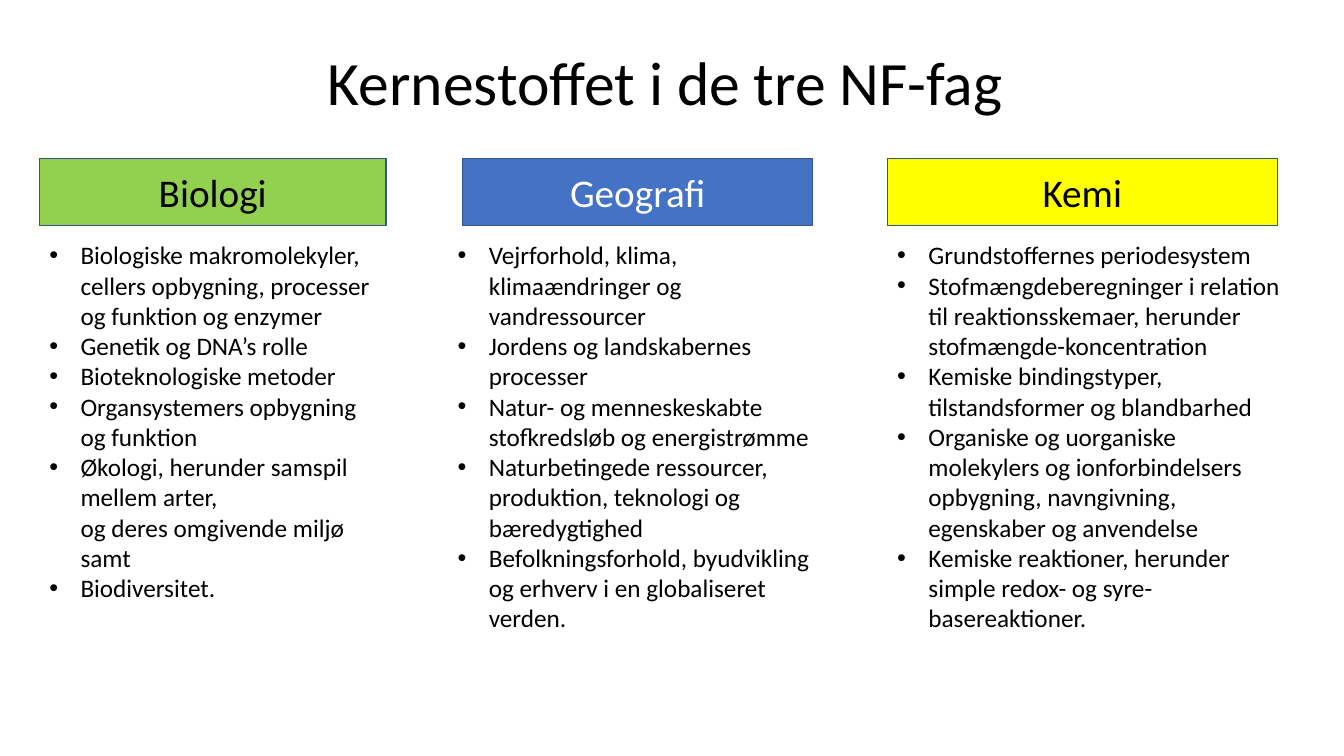
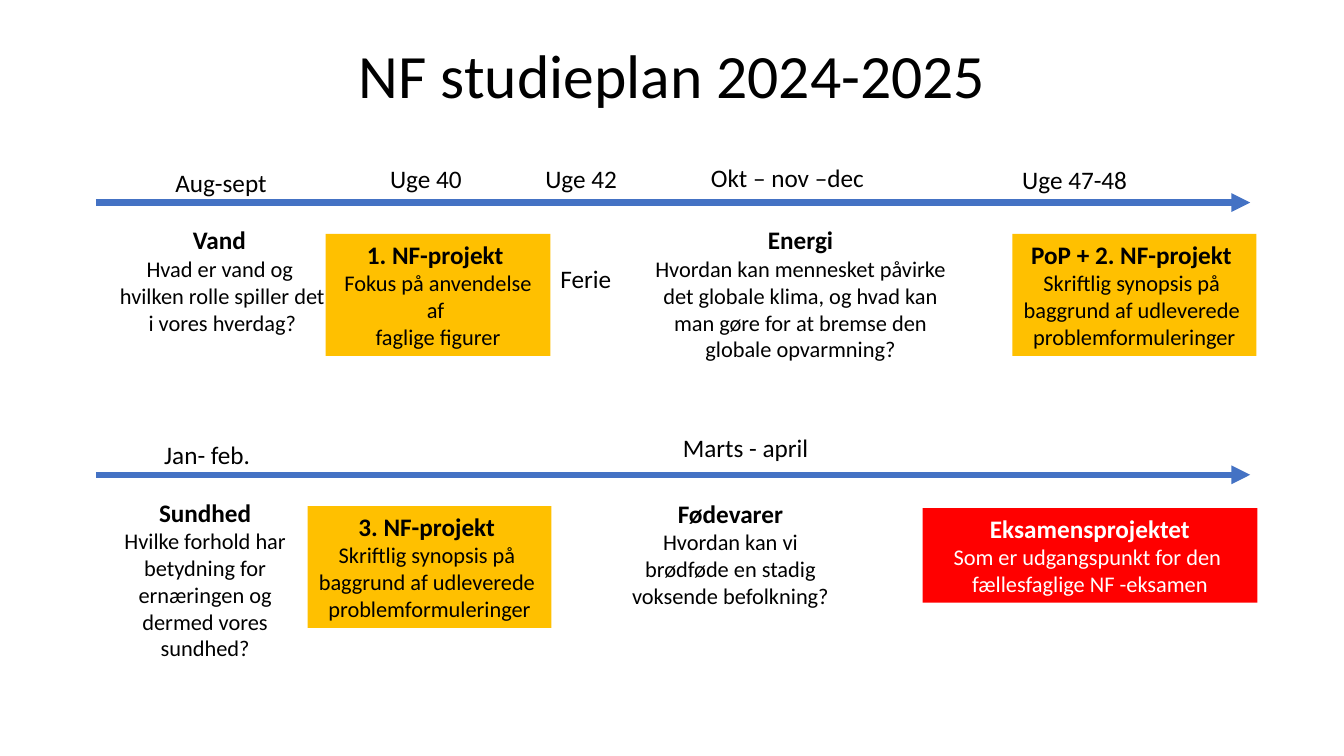
"""Builds two slides: the core subject matter of three science subjects and the year's study plan."""
from lxml import etree
from pptx import Presentation
from pptx.dml.color import RGBColor
from pptx.enum.shapes import MSO_CONNECTOR, MSO_SHAPE
from pptx.enum.text import MSO_ANCHOR, MSO_AUTO_SIZE, PP_ALIGN
from pptx.oxml.ns import qn
from pptx.util import Inches, Pt

CENTER, LEFT, MIDDLE = PP_ALIGN.CENTER, PP_ALIGN.LEFT, MSO_ANCHOR.MIDDLE
GROW = MSO_AUTO_SIZE.SHAPE_TO_FIT_TEXT
RECTANGLE, STRAIGHT = MSO_SHAPE.RECTANGLE, MSO_CONNECTOR.STRAIGHT

BLACK = RGBColor(0x00, 0x00, 0x00)
WHITE = RGBColor(0xFF, 0xFF, 0xFF)
GREEN = RGBColor(0x92, 0xD0, 0x50)
BLUE = RGBColor(0x44, 0x72, 0xC4)
DARK_BLUE = RGBColor(0x32, 0x54, 0x91)
YELLOW = RGBColor(0xFF, 0xFF, 0x00)
AMBER = RGBColor(0xFF, 0xC0, 0x00)
RED = RGBColor(0xFF, 0x00, 0x00)

FONT = "Calibri"
TITLE_SIZE, HEADER_SIZE, TEXT_SIZE, DETAIL_SIZE = 44, 28, 18, 16
SLIDE_WIDTH, SLIDE_HEIGHT = 13.33, 7.5
TITLE_LEFT, TITLE_WIDTH, TITLE_HEIGHT = 0.92, 11.5, 1.45
HEADER_TOP, HEADER_HEIGHT, LIST_TOP = 1.57, 0.67, 2.33
BULLET_INDENT = 0.31
AXIS_START, AXIS_END = 0.95, 12.4
FIRST_AXIS, AXIS_PITCH = 2.01, 2.7
LABEL_HEIGHT = 0.4

SUBJECTS = [
    {"name": "Biologi", "fill": GREEN, "color": BLACK,
     "header": (0.39, 3.44), "list": (0.39, 3.52, 3.74),
     "topics": [
         "Biologiske makromolekyler,\ncellers opbygning, processer \nog funktion og enzymer",
         "Genetik og DNA’s rolle",
         "Bioteknologiske metoder",
         "Organsystemers opbygning \nog funktion",
         "Økologi, herunder samspil mellem arter, \nog deres omgivende miljø samt",
         "Biodiversitet."]},
    {"name": "Geografi", "fill": BLUE, "color": WHITE,
     "header": (4.59, 3.47), "list": (4.44, 3.75, 4.04),
     "topics": [
         "Vejrforhold, klima, klimaændringer og vandressourcer",
         "Jordens og landskabernes processer",
         "Natur- og menneskeskabte \nstofkredsløb og energistrømme",
         "Naturbetingede ressourcer, \nproduktion, teknologi og \nbæredygtighed",
         "Befolkningsforhold, byudvikling og erhverv i en globaliseret verden."]},
    {"name": "Kemi", "fill": YELLOW, "color": BLACK,
     "header": (8.8, 3.87), "list": (8.8, 4.02, 4.34),
     "topics": [
         "Grundstoffernes periodesystem",
         "Stofmængdeberegninger i relation til reaktionsskemaer, herunder stofmængde-koncentration",
         "Kemiske bindingstyper, tilstandsformer og blandbarhed",
         "Organiske og uorganiske molekylers og ionforbindelsers opbygning, navngivning, "
         "egenskaber og anvendelse",
         "Kemiske reaktioner, herunder \nsimple redox- og syre-basereaktioner."]},
]

SYNOPSIS = "Skriftlig synopsis på \nbaggrund af udleverede \nproblemformuleringer"

# Labels: text, left, offset from axis, width, alignment, wrap.
# Cards: heading, detail, left, offset from axis, width, height, fill, wrap.
SEMESTERS = [
    {"labels": [("Aug-sept", 1.64, -0.4, 1.12, LEFT, False),
                ("Uge 40", 3.77, -0.44, 0.98, LEFT, False),
                ("Uge 42", 5.31, -0.44, 0.98, LEFT, False),
                ("Okt – nov –dec", 6.29, -0.45, 3.04, CENTER, True),
                ("Uge 47-48", 10.04, -0.43, 1.31, LEFT, False),
                ("Ferie", 5.46, 0.55, 0.71, LEFT, False)],
     "cards": [("Vand ", "Hvad er vand og \nhvilken rolle spiller det\ni vores hverdag?",
                1.09, 0.17, 2.23, 1.48, None, True),
               ("1. NF-projekt ", "Fokus på anvendelse af \nfaglige figurer",
                3.23, 0.31, 2.23, 1.21, AMBER, True),
               ("Energi", "Hvordan kan mennesket påvirke det globale klima, og hvad kan man "
                "gøre for at bremse den globale opvarmning?",
                6.29, 0.17, 3.3, 1.48, None, True),
               ("PoP + 2. NF-projekt ", SYNOPSIS, 10.04, 0.31, 2.42, 1.21, AMBER, False)]},
    {"labels": [("Jan- feb.", 1.53, -0.4, 1.12, LEFT, False),
                ("Marts - april", 6.02, -0.47, 2.75, CENTER, True)],
     "cards": [("Sundhed", "Hvilke forhold har betydning for ernæringen og dermed vores sundhed?",
                0.92, 0.17, 2.23, 1.75, None, True),
               ("3. NF-projekt ", SYNOPSIS, 3.05, 0.31, 2.42, 1.21, AMBER, False),
               ("Fødevarer", "Hvordan kan vi brødføde en stadig voksende befolkning?",
                6.13, 0.18, 2.23, 1.21, None, True),
               ("Eksamensprojektet", "Som er udgangspunkt for den \nfællesfaglige NF -eksamen",
                9.15, 0.33, 3.32, 0.94, RED, True)]},
]


def write_paragraph(paragraph, text, size, color=BLACK, bold=False, align=CENTER):
    paragraph.text = text
    paragraph.alignment = align
    for run in paragraph.runs:
        run.font.name = FONT
        run.font.size = Pt(size)
        run.font.bold = bold
        run.font.color.rgb = color
    for line_break in paragraph._p.findall(qn("a:br")):
        etree.SubElement(line_break, qn("a:rPr"), sz=str(size * 100))


def add_titled_slide(presentation, title, top):
    slide = presentation.slides.add_slide(presentation.slide_layouts[5])
    shape = slide.shapes.title
    shape.left, shape.top = Inches(TITLE_LEFT), Inches(top)
    shape.width, shape.height = Inches(TITLE_WIDTH), Inches(TITLE_HEIGHT)
    shape.text_frame.vertical_anchor = MIDDLE
    paragraph = shape.text_frame.paragraphs[0]
    write_paragraph(paragraph, title, TITLE_SIZE)
    paragraph.line_spacing = 0.9
    return slide


def add_text(slide, left, top, width, height, lines, wrap=True, fill=None):
    """Adds a text box; each line is (text, formatting), and the paragraphs are returned."""
    box = slide.shapes.add_textbox(Inches(left), Inches(top), Inches(width), Inches(height))
    frame = box.text_frame
    frame.word_wrap = wrap
    frame.auto_size = GROW
    if fill is not None:
        box.fill.solid()
        box.fill.fore_color.rgb = fill
    for index, (text, formatting) in enumerate(lines):
        paragraph = frame.add_paragraph() if index else frame.paragraphs[0]
        write_paragraph(paragraph, text, **formatting)
    return frame.paragraphs


def add_bullet(paragraph):
    properties = paragraph._p.get_or_add_pPr()
    properties.set("marL", str(Inches(BULLET_INDENT)))
    properties.set("indent", str(-Inches(BULLET_INDENT)))
    etree.SubElement(properties, qn("a:buFont"), typeface="Arial")
    etree.SubElement(properties, qn("a:buChar"), char="•")


def add_subject(slide, subject):
    left, width = subject["header"]
    header = slide.shapes.add_shape(RECTANGLE, Inches(left), Inches(HEADER_TOP),
                                    Inches(width), Inches(HEADER_HEIGHT))
    header.shadow.inherit = False
    header.fill.solid()
    header.fill.fore_color.rgb = subject["fill"]
    header.line.color.rgb = DARK_BLUE
    header.line.width = Pt(1)
    header.text_frame.vertical_anchor = MIDDLE
    write_paragraph(header.text_frame.paragraphs[0], subject["name"], HEADER_SIZE, subject["color"])

    left, width, height = subject["list"]
    lines = [(topic, {"size": TEXT_SIZE, "align": LEFT}) for topic in subject["topics"]]
    for paragraph in add_text(slide, left, LIST_TOP, width, height, lines):
        add_bullet(paragraph)


def add_axis(slide, top):
    axis = slide.shapes.add_connector(STRAIGHT, Inches(AXIS_START), Inches(top),
                                      Inches(AXIS_END), Inches(top))
    axis.line.color.rgb = BLUE
    axis.line.width = Pt(4.5)
    properties = axis._element.spPr
    etree.SubElement(properties.find(qn("a:ln")), qn("a:tailEnd"), type="triangle")
    etree.SubElement(properties, qn("a:effectLst"))


def add_semester(slide, semester, axis_top):
    add_axis(slide, axis_top)
    for text, left, offset, width, align, wrap in semester["labels"]:
        add_text(slide, left, axis_top + offset, width, LABEL_HEIGHT,
                 [(text, {"size": TEXT_SIZE, "align": align})], wrap)
    for heading, detail, left, offset, width, height, fill, wrap in semester["cards"]:
        color = WHITE if fill == RED else BLACK
        lines = [(heading, {"size": TEXT_SIZE, "color": color, "bold": True}),
                 (detail, {"size": DETAIL_SIZE, "color": color})]
        add_text(slide, left, axis_top + offset, width, height, lines, wrap, fill)


def main():
    presentation = Presentation()
    presentation.slide_width = Inches(SLIDE_WIDTH)
    presentation.slide_height = Inches(SLIDE_HEIGHT)

    slide = add_titled_slide(presentation, "Kernestoffet i de tre NF-fag ", 0.12)
    for subject in SUBJECTS:
        add_subject(slide, subject)

    slide = add_titled_slide(presentation, "NF studieplan 2024-2025", 0.05)
    for index, semester in enumerate(SEMESTERS):
        add_semester(slide, semester, FIRST_AXIS + index * AXIS_PITCH)

    presentation.save("out.pptx")


if __name__ == "__main__":
    main()
